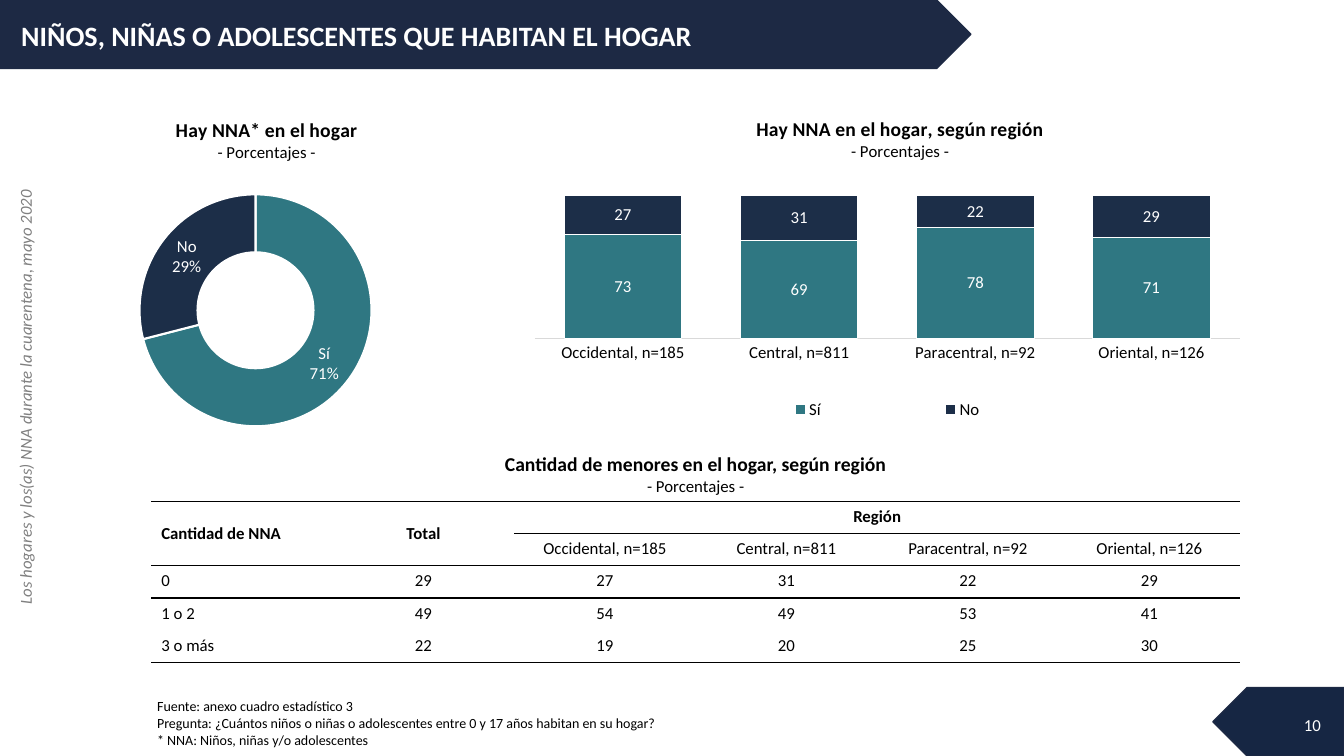
"""Builds the slide on children and teenagers living in the household."""
import lxml.etree
import pptx
import pptx.chart.data
import pptx.dml.color
import pptx.enum.chart
import pptx.enum.shapes
import pptx.enum.text
import pptx.oxml.ns
import pptx.util

COLORS = {"banner": "1D2944", "corner": "162643", "yes": "2F7782", "no": "1C2E48",
          "white": "FFFFFF", "black": "000000", "gray": "808080", "axis": "D9D9D9"}
RGB = {name: pptx.dml.color.RGBColor.from_string(value) for name, value in COLORS.items()}
FONT = "Calibri"
UNIT = pptx.util.Inches(0.01)
COLS, ROWS = 1333, 750
SUBTITLE = "- Porcentajes -"
REGIONS = ["Occidental, n=185", "Central, n=811", "Paracentral, n=92", "Oriental, n=126"]
ALIGN = pptx.enum.text.PP_ALIGN
ANCHOR = pptx.enum.text.MSO_ANCHOR
TYPES = pptx.enum.chart.XL_CHART_TYPE
qn = pptx.oxml.ns.qn


def grid(*cells):
    """Turn grid columns and rows into lengths."""
    return [pptx.util.Emu(round(n * UNIT)) for n in cells]


def write(tf, text, size=12, color="black", bold=False, italic=False,
          align=ALIGN.LEFT, anchor=ANCHOR.TOP, subtitle_size=None):
    """Fill a text frame, with a lighter second line if subtitle_size is given."""
    tf.word_wrap = True
    tf.vertical_anchor = anchor
    for i, line in enumerate(text.split("\n")):
        p = tf.add_paragraph() if i else tf.paragraphs[0]
        p.alignment = align
        r = p.add_run()
        r.text = line
        below = i > 0 and subtitle_size is not None
        r.font.name = FONT
        r.font.size = pptx.util.Pt(subtitle_size if below else size)
        r.font.bold = bold and not below
        r.font.italic = italic
        r.font.color.rgb = RGB[color]


prs = pptx.Presentation()
prs.slide_width, prs.slide_height = grid(COLS, ROWS)
slide = prs.slides.add_slide(prs.slide_layouts[5])

for cells, color, rotation in (((0, 0, 963, 68), "banner", 0),
                               ((COLS - 130, ROWS - 68, 130, 68), "corner", 180)):
    sp = slide.shapes.add_shape(pptx.enum.shapes.MSO_SHAPE.PENTAGON, *grid(*cells))
    sp.rotation = rotation
    sp.shadow.inherit = False
    sp.fill.solid()
    sp.fill.fore_color.rgb = RGB[color]
    sp.line.color.rgb = RGB["banner"]
    sp.line.width = pptx.util.Pt(1)

title = slide.shapes.title
title.left, title.top, title.width, title.height = grid(11, 13, 960, 44)
title.text_frame.auto_size = pptx.enum.text.MSO_AUTO_SIZE.NONE
write(title.text_frame, "NIÑOS, NIÑAS O ADOLESCENTES QUE HABITAN EL HOGAR",
      size=20, color="white", bold=True)
title.element.getparent().append(title.element)

FOOTNOTE = """Fuente: anexo cuadro estadístico 3
Pregunta: ¿Cuántos niños o niñas o adolescentes entre 0 y 17 años habitan en su hogar?
* NNA: Niños, niñas y/o adolescentes"""
for cells, rotation, text, style in (
        ((1020, 699, 300, 40), 0, "10",
         dict(color="white", align=ALIGN.RIGHT, anchor=ANCHOR.MIDDLE)),
        ((-257, 379, 564, 30), 270, "Los hogares y los(as) NNA durante la cuarentena, mayo 2020",
         dict(color="gray", italic=True, align=ALIGN.CENTER)),
        ((146, 687, 801, 61), 0, FOOTNOTE, dict(size=10))):
    sp = slide.shapes.add_textbox(*grid(*cells))
    sp.rotation = rotation
    write(sp.text_frame, text, **style)

region_data = pptx.chart.data.CategoryChartData()
region_data.categories = REGIONS
region_data.add_series("Sí", (73, 69, 78, 71))
region_data.add_series("No", (27, 31, 22, 29))
total_data = pptx.chart.data.CategoryChartData()
total_data.categories = ["Sí", "No"]
total_data.add_series("Series 1", (71, 29))

for kind, cells, data, heading, title_at, plot_at in (
        (TYPES.COLUMN_STACKED_100, (530, 105, 700, 319), region_data,
         "Hay NNA en el hogar, según región", (0.31, 0.02), (0, 0.28, 1, 0.445)),
        (TYPES.DOUGHNUT, (48, 106, 411, 318), total_data,
         "Hay NNA* en el hogar", (0.3, 0.02), (0.22, 0.27, 0.56, 0.73))):
    chart = slide.shapes.add_chart(kind, *grid(*cells), data).chart
    chart.font.name = FONT
    chart.font.size = pptx.util.Pt(12)
    chart.font.color.rgb = RGB["black"]
    write(chart.chart_title.text_frame, f"{heading}\n{SUBTITLE}", size=14, bold=True,
          align=ALIGN.CENTER, subtitle_size=12)
    plot = chart.plots[0]
    is_column = kind == TYPES.COLUMN_STACKED_100
    plot.vary_by_categories = not is_column
    chart.has_legend = is_column
    for series in plot.series:
        labels = series.data_labels
        labels.font.name = FONT
        labels.font.size = pptx.util.Pt(12)
        labels.font.color.rgb = RGB["white"]
        labels.number_format = "0" if is_column else "0%"
        labels.number_format_is_linked = False
        labels.show_value = is_column
        labels.show_category_name = labels.show_percentage = not is_column
    parts = plot.series if is_column else [plot.series[0].points[i] for i in range(2)]
    for part, color in zip(parts, ("yes", "no")):
        part.format.fill.solid()
        part.format.fill.fore_color.rgb = RGB[color]
        part.format.line.color.rgb = RGB["white"]
        part.format.line.width = pptx.util.Pt(0.75 if is_column else 1.5)
    placed = [(chart.chart_title.element, 1, title_at),
              (chart.element.find(".//" + qn("c:plotArea")), 0, plot_at)]
    if is_column:
        plot.gap_width, plot.overlap = 50, 100
        chart.value_axis.visible = False
        chart.value_axis.has_major_gridlines = False
        axis = chart.category_axis
        axis.major_tick_mark = pptx.enum.chart.XL_TICK_MARK.NONE
        axis.format.line.color.rgb = RGB["axis"]
        axis.format.line.width = pptx.util.Pt(0.75)
        chart.legend.position = pptx.enum.chart.XL_LEGEND_POSITION.BOTTOM
        chart.legend.include_in_layout = False
        placed.append((chart.element.find(".//" + qn("c:legend")), 1, (0.2, 0.9, 0.6, 0.09)))
    else:
        separator = lxml.etree.Element(qn("c:separator"))
        separator.text = "\n"
        chart.element.find(".//" + qn("c:showBubbleSize")).addnext(separator)
    for parent, index, shares in placed:
        for old in parent.findall(qn("c:layout")):
            parent.remove(old)
        layout = lxml.etree.Element(qn("c:layout"))
        manual = lxml.etree.SubElement(layout, qn("c:manualLayout"))
        settings = [("layoutTarget", "inner")] if index == 0 else []
        settings += [("xMode", "edge"), ("yMode", "edge"), *zip("xywh", shares)]
        for tag, value in settings:
            lxml.etree.SubElement(manual, qn(f"c:{tag}")).set("val", str(value))
        parent.insert(index, layout)

TABLE = [[f"Cantidad de menores en el hogar, según región\n{SUBTITLE}"] + [""] * 5,
         ["Cantidad de NNA", "Total", "Región", "", "", ""],
         ["", "", *REGIONS],
         ["0", "29", "27", "31", "22", "29"],
         ["1 o 2", "49", "54", "49", "53", "41"],
         ["3 o más", "22", "19", "20", "25", "30"]]
RULED_ROWS = {0, 1, 2, 5}
frame = slide.shapes.add_table(6, 6, *grid(150, 444, 1080, 212))
frame.element.find(".//" + qn("a:tableStyleId")).text = "{2D5ABB26-0587-4C30-8999-92F81FD0307C}"
table = frame.table
table.first_row = table.horz_banding = False
for row, height in zip(table.rows, grid(52, *[32] * 5)):
    row.height = height
for first, last in (((0, 0), (0, 5)), ((1, 0), (2, 0)), ((1, 1), (2, 1)), ((1, 2), (1, 5))):
    table.cell(*first).merge(table.cell(*last))
for r, texts in enumerate(TABLE):
    for c, text in enumerate(texts):
        cell = table.cell(r, c)
        under_merged = r == 2 and c < 2
        for tag, ruled in (("lnT", r - 1 in RULED_ROWS and not under_merged),
                           ("lnB", r in RULED_ROWS)):
            if ruled:
                ln = lxml.etree.SubElement(cell._tc.get_or_add_tcPr(), qn(f"a:{tag}"), w="12700")
                fill = lxml.etree.SubElement(ln, qn("a:solidFill"))
                lxml.etree.SubElement(fill, qn("a:srgbClr"), val=COLORS["black"])
        cell.fill.background()
        if text:
            write(cell.text_frame, text, size=12 if r else 14, bold=r < 2,
                  align=ALIGN.LEFT if r and c == 0 else ALIGN.CENTER, subtitle_size=12)
        cell.vertical_anchor = ANCHOR.MIDDLE if r == 1 and c < 2 else ANCHOR.TOP

prs.save("out.pptx")
